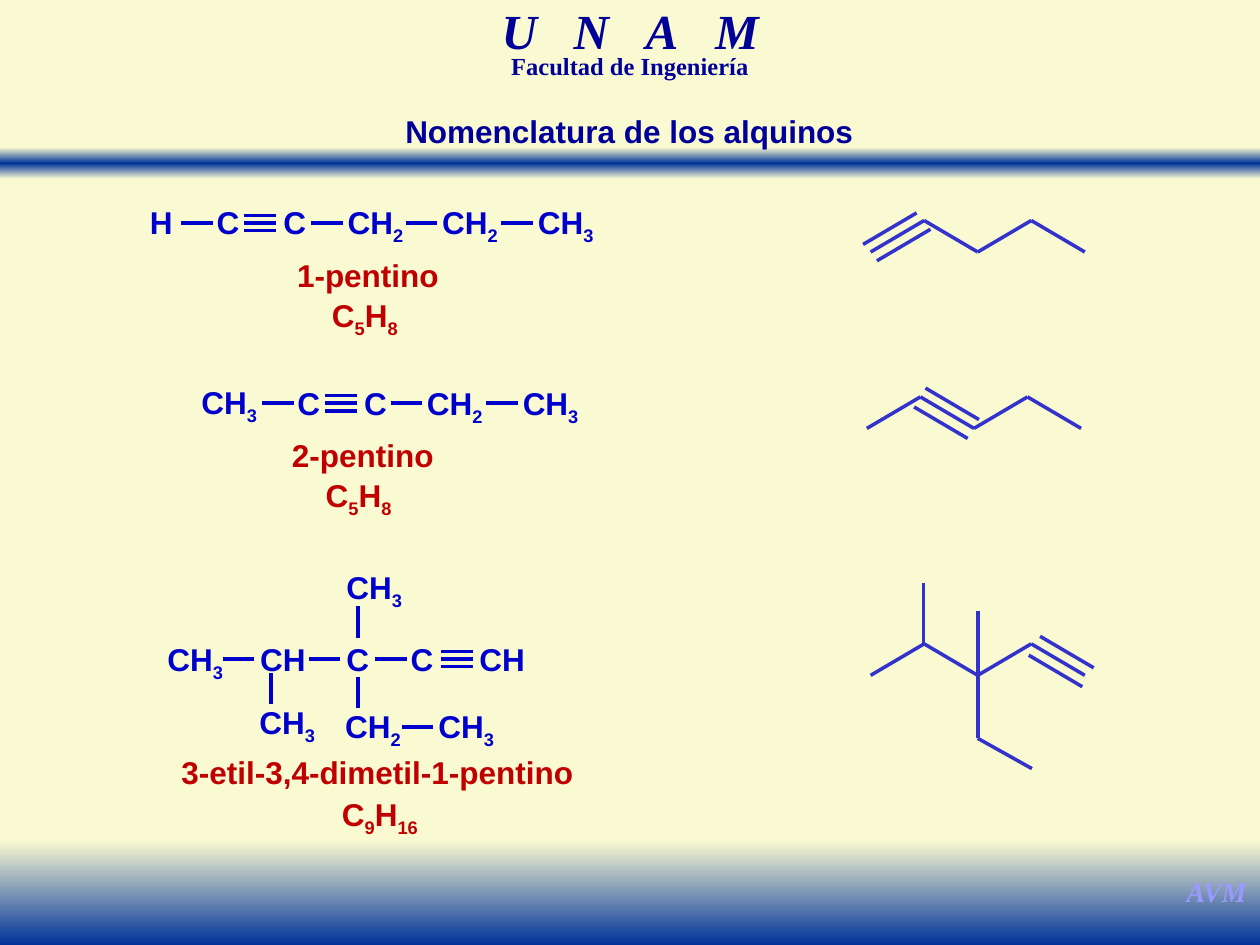
from itertools import groupby
from typing import NamedTuple

from lxml import etree
from pptx import Presentation
from pptx.dml.color import RGBColor
from pptx.enum.shapes import MSO_CONNECTOR, MSO_SHAPE
from pptx.enum.text import MSO_ANCHOR, MSO_AUTO_SIZE, PP_ALIGN
from pptx.oxml.ns import qn
from pptx.util import Inches, Pt

STRAIGHT, RECTANGLE = MSO_CONNECTOR.STRAIGHT, MSO_SHAPE.RECTANGLE
CENTER, TOP, GROW = PP_ALIGN.CENTER, MSO_ANCHOR.TOP, MSO_AUTO_SIZE.SHAPE_TO_FIT_TEXT

CREAM, DEEP_BLUE, NAVY, LILAC = "FAFAD2", "003399", "000099", "9999FF"
RED, BLUE, SKELETON_BLUE = "C00000", "0000CC", "3333CC"
SANS, SERIF = "Arial", "Times New Roman"

BOND_LENGTH, TRIPLE_GAP, LINE_HEIGHT = 0.25, 0.06, 0.4
ZIGZAG_STEP, ZIGZAG_RISE = 0.425, 0.25
ATOM_WIDTHS = {"H": 0.38, "C": 0.38, "CH": 0.57, "CH2": 0.66, "CH3": 0.66}


class Style(NamedTuple):
    color: str
    size: float = 18
    font: str = SANS
    italic: bool = False


class Atom(NamedTuple):
    formula: str
    left: float
    top: float


class Bond(NamedTuple):
    left: float
    top: float
    order: int = 1
    vertical: bool = False


class Line(NamedTuple):
    x1: float
    y1: float
    x2: float
    y2: float


class Skeleton(NamedTuple):
    left: float
    bottom: float
    triple_index: int
    offsets: tuple  # shifts of the two outer strokes of the triple bond
    branches: tuple = ()


class Caption(NamedTuple):
    text: str
    left: float
    top: float
    width: float
    is_formula: bool = False


def rgb(value: str) -> RGBColor:
    return RGBColor.from_string(value)


def add_span(para, text: str, style: Style):
    span = para.add_run()
    span.text = text
    font = span.font
    font.name, font.size, font.bold, font.italic = style.font, Pt(style.size), True, style.italic
    font.color.rgb = rgb(style.color)
    return span


def format_box(box):
    frame = box.text_frame
    frame.word_wrap, frame.auto_size, frame.vertical_anchor = False, GROW, TOP
    para = frame.paragraphs[0]
    para.alignment = CENTER
    return para


def add_box(shapes, left: float, top: float, width: float, height: float = LINE_HEIGHT):
    box = shapes.add_textbox(Inches(left), Inches(top), Inches(width), Inches(height))
    return format_box(box)


def add_formula(para, formula: str, style: Style) -> None:
    for is_number, symbols in groupby(formula, str.isdigit):
        span = add_span(para, "".join(symbols), style)
        if is_number:
            span.font._element.set("baseline", "-25000")


def add_line(shapes, line: Line, color: str) -> None:
    connector = shapes.add_connector(STRAIGHT, *(Inches(value) for value in line))
    connector.line.color.rgb = rgb(color)
    connector.line.width = Pt(2)
    etree.SubElement(connector._element.spPr, qn("a:effectLst"))


def add_band(shapes, top: float, height: float, colors: list[str]) -> None:
    band = shapes.add_shape(RECTANGLE, 0, Inches(top), Inches(10), Inches(height))
    band.shadow.inherit = False
    band.line.fill.background()
    band.fill.gradient()
    band.fill.gradient_angle = 270
    stops = band._element.spPr.find(".//" + qn("a:gsLst"))
    for stop in list(stops):
        stops.remove(stop)
    for index, color in enumerate(colors):
        position = 100000 * index // (len(colors) - 1)
        stop = etree.SubElement(stops, qn("a:gs"), pos=str(position))
        etree.SubElement(stop, qn("a:srgbClr"), val=color)


def add_condensed(page, atoms: list[Atom], bonds: list[Bond]) -> None:
    shapes = page.shapes.add_group_shape().shapes
    for atom in atoms:
        para = add_box(shapes, atom.left, atom.top, ATOM_WIDTHS[atom.formula])
        add_formula(para, atom.formula, Style(BLUE))
    for left, top, order, vertical in bonds:
        across, down = (0, BOND_LENGTH) if vertical else (BOND_LENGTH, 0)
        for stroke in range(order):
            y = top + (stroke - (order - 1) / 2) * TRIPLE_GAP
            add_line(shapes, Line(left, y, left + across, y + down), BLUE)


def add_skeleton(page, skeleton: Skeleton) -> None:
    shapes = page.shapes.add_group_shape().shapes
    points = [(skeleton.left + i * ZIGZAG_STEP, skeleton.bottom - i % 2 * ZIGZAG_RISE)
              for i in range(5)]
    lines = [Line(*start, *end) for start, end in zip(points, points[1:])]
    x1, y1, x2, y2 = lines[skeleton.triple_index]
    lines += [Line(x1 + dx, y1 + dy, x2 + dx, y2 + dy) for dx, dy in skeleton.offsets]
    for line in (*lines, *skeleton.branches):
        add_line(shapes, line, SKELETON_BLUE)


MOLECULES = [
    ([Atom("H", 1.09, 1.56), Atom("C", 1.62, 1.56), Atom("C", 2.15, 1.56),
      Atom("CH2", 2.65, 1.56), Atom("CH2", 3.4, 1.56), Atom("CH3", 4.16, 1.56)],
     [Bond(1.44, 1.77), Bond(1.94, 1.77, 3), Bond(2.47, 1.77), Bond(3.22, 1.77),
      Bond(3.98, 1.77)]),
    ([Atom("CH3", 1.49, 2.99), Atom("C", 2.26, 3), Atom("C", 2.79, 3),
      Atom("CH2", 3.28, 3), Atom("CH3", 4.04, 3)],
     [Bond(2.08, 3.2), Bond(2.58, 3.2, 3), Bond(3.1, 3.2), Bond(3.86, 3.2)]),
    ([Atom("CH3", 1.22, 5.03), Atom("CH", 1.96, 5.03), Atom("C", 2.65, 5.03),
      Atom("C", 3.16, 5.03), Atom("CH", 3.7, 5.03), Atom("CH3", 2.64, 4.46),
      Atom("CH3", 1.95, 5.53), Atom("CH2", 2.63, 5.56), Atom("CH3", 3.37, 5.56)],
     [Bond(1.77, 5.23), Bond(2.45, 5.23), Bond(2.98, 5.23), Bond(3.5, 5.23, 3),
      Bond(3.19, 5.77), Bond(2.84, 4.81, vertical=True),
      Bond(2.84, 5.37, vertical=True), Bond(2.15, 5.34, vertical=True)]),
]
SKELETONS = [
    Skeleton(6.91, 2, 0, ((0.05, 0.07), (-0.06, -0.06))),
    Skeleton(6.88, 3.4, 1, ((-0.05, 0.08), (0.04, -0.07))),
    Skeleton(6.91, 5.36, 3, ((-0.02, 0.09), (0.07, -0.06)),
             (Line(7.33, 4.63, 7.33, 5.13), Line(7.76, 4.85, 7.76, 5.36),
              Line(7.76, 5.36, 7.76, 5.86), Line(7.76, 5.86, 8.19, 6.1))),
]
CAPTIONS = [
    Caption("1-pentino", 2.25, 1.98, 1.34), Caption("C5H8", 2.52, 2.3, 0.75, True),
    Caption("2-pentino", 2.21, 3.41, 1.34), Caption("C5H8", 2.47, 3.73, 0.75, True),
    Caption("3-etil-3,4-dimetil-1-pentino", 1.19, 5.93, 3.61),
    Caption("C9H16", 2.59, 6.26, 0.85, True),
]


def main() -> None:
    deck = Presentation()
    deck.slide_width, deck.slide_height = Inches(10), Inches(7.5)
    page = deck.slides.add_slide(deck.slide_layouts[5])
    page.background.fill.solid()
    page.background.fill.fore_color.rgb = rgb(CREAM)

    # Bands, with the title in front of them
    add_band(page.shapes, 1.17, 0.25, [CREAM, DEEP_BLUE, CREAM])
    add_band(page.shapes, 6.67, 0.83, [CREAM, DEEP_BLUE])
    title = page.shapes.title
    title.left, title.top, title.width, title.height = map(Inches, (3.03, 0.84, 3.93, 0.4))
    add_span(format_box(title), "Nomenclatura de los alquinos", Style(NAVY))
    page.shapes._spTree.append(title._element)

    # School heading: the spaces between the letters are widened
    heading = add_box(page.shapes, 3.04, 0.08, 3.92, 0.43)
    heading.line_spacing = 0.7
    for symbol in "U N A M":
        span = add_span(heading, symbol, Style(NAVY, 28, SERIF, True))
        if symbol == " ":
            span.font._element.set("spc", "1400")
    faculty = add_box(page.shapes, 3.21, 0.42, 3.58, 0.26)
    faculty.line_spacing = 0.7
    add_span(faculty, "Facultad de Ingeniería", Style(NAVY, 14, SERIF))
    initials = add_box(page.shapes, 9.31, 6.89, 0.69, 0.37)
    add_span(initials, "AVM", Style(LILAC, 16, SERIF, True))

    # Molecules and their names
    for atoms, bonds in MOLECULES:
        add_condensed(page, atoms, bonds)
    for skeleton in SKELETONS:
        add_skeleton(page, skeleton)
    for text, left, top, width, is_formula in CAPTIONS:
        add_text = add_formula if is_formula else add_span
        add_text(add_box(page.shapes, left, top, width), text, Style(RED))

    deck.save("out.pptx")


if __name__ == "__main__":
    main()
